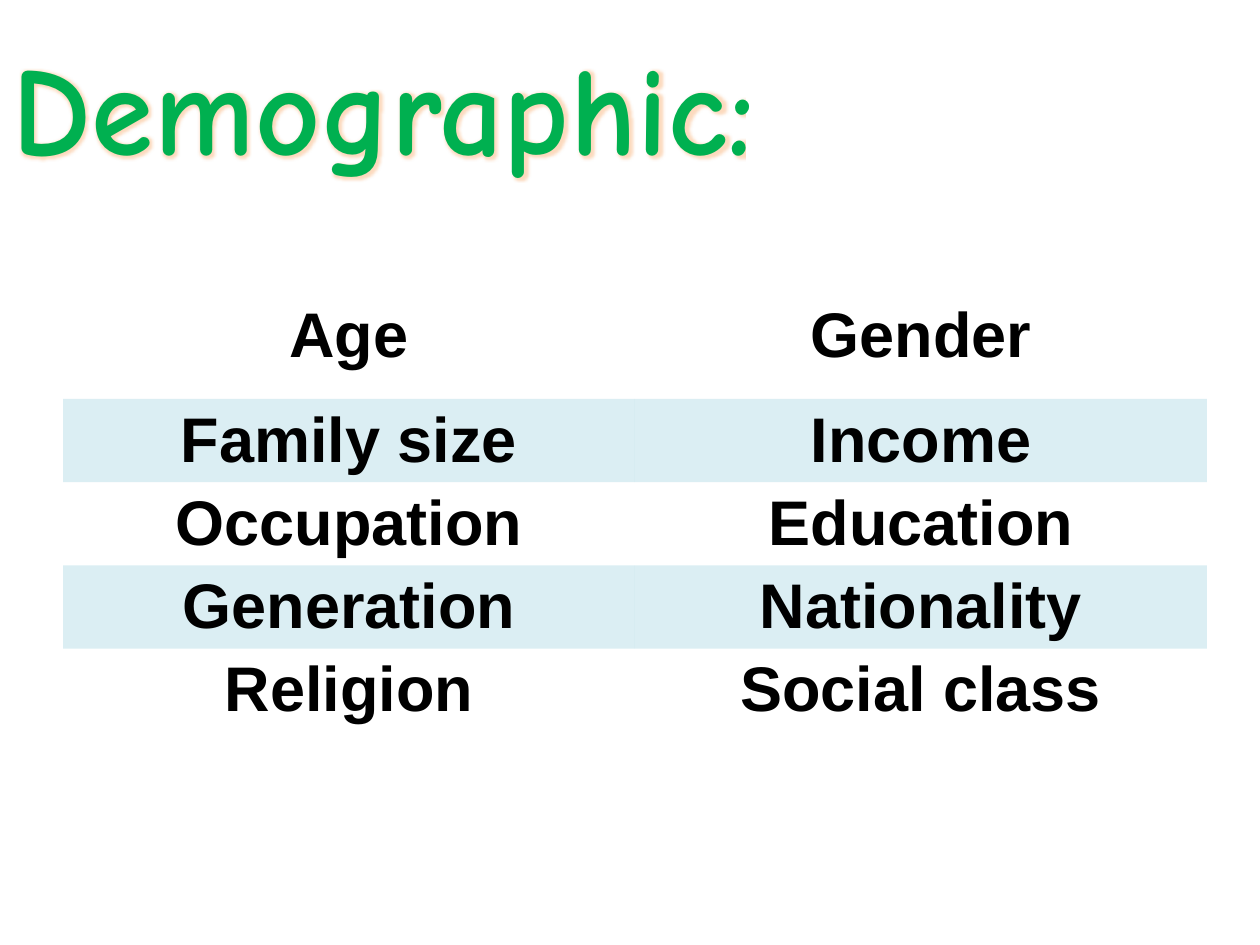
from lxml import etree
from pptx import Presentation
from pptx.dml.color import RGBColor
from pptx.enum.text import MSO_ANCHOR, PP_ALIGN
from pptx.oxml import parse_xml
from pptx.oxml.ns import nsdecls, qn

PX = 914400 // 126
LEFT = PP_ALIGN.LEFT
CENTER = PP_ALIGN.CENTER
MIDDLE = MSO_ANCHOR.MIDDLE


def color(value):
    return RGBColor.from_string(value)


presentation = Presentation()
presentation.slide_width = 1260 * PX
presentation.slide_height = 945 * PX
slide = presentation.slides.add_slide(presentation.slide_layouts[5])

ROWS = [
    ("Age", "Gender"),
    ("Family size", "Income"),
    ("Occupation", "Education"),
    ("Generation", "Nationality"),
    ("Religion", "Social class"),
]
HEADER_HEIGHT, ROW_HEIGHT, COLUMN_WIDTH = 105, 83, 572
table_height = HEADER_HEIGHT + ROW_HEIGHT * (len(ROWS) - 1)
table = slide.shapes.add_table(
    len(ROWS), 2, 63 * PX, 294 * PX, 2 * COLUMN_WIDTH * PX, table_height * PX
).table
table.first_row = False
table.horz_banding = False
style_id = table._tbl.tblPr.find(qn("a:tableStyleId"))
style_id.text = "{2D5ABB26-0587-4C30-8999-92F81FD0307C}"
for row_index, texts in enumerate(ROWS):
    table.rows[row_index].height = (ROW_HEIGHT if row_index else HEADER_HEIGHT) * PX
    for column_index, text in enumerate(texts):
        cell = table.cell(row_index, column_index)
        cell.text = text
        if row_index % 2:
            cell.fill.solid()
            cell.fill.fore_color.rgb = color("4BACC6")
            fill_color = cell._tc.tcPr.find(".//" + qn("a:srgbClr"))
            etree.SubElement(fill_color, qn("a:alpha"), val="20000")
        else:
            cell.fill.background()
        paragraph = cell.text_frame.paragraphs[0]
        paragraph.alignment = CENTER
        paragraph.font.name = "Arial"
        paragraph.font.size = 36 * 12700
        paragraph.font.bold = True
        paragraph.font.color.rgb = color("000000")

title = slide.shapes.title
title.left, title.top = 0, 0
title.width, title.height = 1218 * PX, 210 * PX
title.text_frame.text = "Demographic:"
title.text_frame.vertical_anchor = MIDDLE
title.text_frame.word_wrap = True
paragraph = title.text_frame.paragraphs[0]
paragraph.alignment = LEFT
run = paragraph.runs[0]
run.font.name = "Comic Neue"
run.font.size = 72 * 12700
run.font.bold = True
run.font.color.rgb = color("00B050")
properties = run.font._element
properties.set("spc", "50")
properties.insert(0, parse_xml(
    f'<a:ln {nsdecls("a")} w="12700"><a:solidFill><a:srgbClr val="FFFF00"/></a:solidFill></a:ln>'
))
properties.find(qn("a:solidFill")).addnext(parse_xml(
    f'<a:effectLst {nsdecls("a")}><a:glow rad="45500"><a:srgbClr val="F79646">'
    '<a:alpha val="35000"/></a:srgbClr></a:glow></a:effectLst>'
))

presentation.save("out.pptx")
